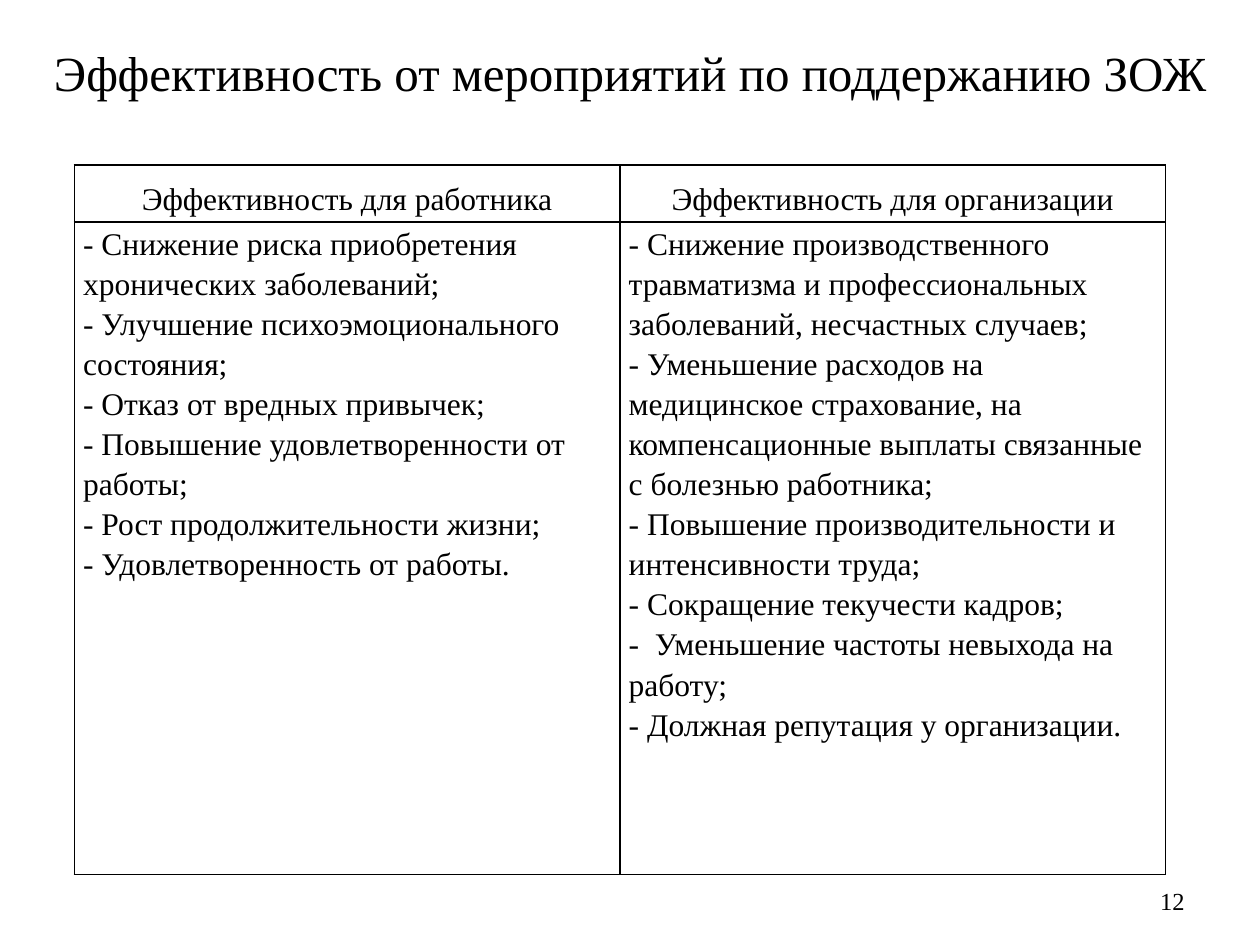
from dataclasses import dataclass

from lxml import etree
from pptx import Presentation
from pptx.dml.color import RGBColor
from pptx.enum.text import MSO_ANCHOR, MSO_AUTO_SIZE, PP_ALIGN
from pptx.oxml.ns import qn
from pptx.slide import Slide
from pptx.table import _Cell
from pptx.text.text import TextFrame
from pptx.util import Inches, Pt

LEFT, MID, RIGHT = PP_ALIGN.LEFT, PP_ALIGN.CENTER, PP_ALIGN.RIGHT
TOP, CENTER = MSO_ANCHOR.TOP, MSO_ANCHOR.MIDDLE
FIXED = MSO_AUTO_SIZE.NONE
FONT = "Times New Roman"
COLORS = {"ink": "000000", "paper": "FFFFFF"}


@dataclass
class Column:
    head: str
    items: list[str]


COLUMNS = [
    Column("Эффективность для работника", [
        "- Снижение риска приобретения хронических заболеваний;",
        "- Улучшение психоэмоционального состояния;",
        "- Отказ от вредных привычек;",
        "- Повышение удовлетворенности от работы;",
        "- Рост продолжительности жизни;",
        "- Удовлетворенность от работы.",
    ]),
    Column("Эффективность для организации", [
        "- Снижение производственного травматизма и профессиональных "
        "заболеваний, несчастных случаев;",
        "- Уменьшение расходов на медицинское страхование, на "
        "компенсационные выплаты связанные с болезнью работника;",
        "- Повышение производительности и интенсивности труда;",
        "- Сокращение текучести кадров;",
        "-  Уменьшение частоты невыхода на работу;",
        "- Должная репутация у организации.",
    ]),
]


def write(frame: TextFrame, text: str, size: int, align: PP_ALIGN,
          lines: float = 1.0, before: float = 0) -> None:
    frame.text = text
    frame.word_wrap = True
    for para in frame.paragraphs:
        para.alignment = align
        para.line_spacing = lines
        para.space_before = Pt(before)
        for run in para.runs:
            run.font.name = FONT
            run.font.size = Pt(size)
            run.font.color.rgb = RGBColor.from_string(COLORS["ink"])


def add_title(slide: Slide, text: str) -> None:
    title = slide.shapes.title
    title.left, title.top = Inches(0.12), Inches(0.29)
    title.width, title.height = Inches(9.76), Inches(7.09)
    frame = title.text_frame
    write(frame, text, 28, MID, before=3)
    frame.auto_size = FIXED
    frame.vertical_anchor = TOP


def add_number(slide: Slide, text: str) -> None:
    box = slide.shapes.add_textbox(
        Inches(7.17), Inches(6.95), Inches(2.33), Inches(0.4))
    write(box.text_frame, text, 14, RIGHT)
    box.text_frame.vertical_anchor = CENTER


def add_border(cell: _Cell) -> None:
    props = cell._tc.get_or_add_tcPr()
    for side in ("lnL", "lnR", "lnT", "lnB"):
        line = etree.SubElement(props, qn(f"a:{side}"), w=str(Pt(1)))
        fill = etree.SubElement(line, qn("a:solidFill"))
        etree.SubElement(fill, qn("a:srgbClr"), val=COLORS["ink"])


def fill_cell(cell: _Cell, text: str, align: PP_ALIGN, lines: float) -> None:
    write(cell.text_frame, text, 18, align, lines)
    cell.margin_left = cell.margin_right = Inches(0.07)
    cell.margin_top = cell.margin_bottom = 0
    add_border(cell)
    cell.fill.background()


def add_grid(slide: Slide, columns: list[Column]) -> None:
    table = slide.shapes.add_table(
        2, len(columns), Inches(0.59), Inches(1.31),
        Inches(8.66), Inches(5.6)).table
    table.first_row = table.horz_banding = False
    for row, height in zip(table.rows, (0.42, 5.18)):
        row.height = Inches(height)
    for index, column in enumerate(columns):
        fill_cell(table.cell(0, index), column.head, MID, 1.5)
        fill_cell(table.cell(1, index), "\n".join(column.items), LEFT, 1.15)


def main() -> None:
    deck = Presentation()
    deck.slide_width, deck.slide_height = Inches(10), Inches(7.5)
    slide = deck.slides.add_slide(deck.slide_layouts[5])
    back = slide.background.fill
    back.solid()
    back.fore_color.rgb = RGBColor.from_string(COLORS["paper"])
    add_title(slide, "Эффективность от мероприятий по поддержанию ЗОЖ")
    add_number(slide, "12")
    add_grid(slide, COLUMNS)
    deck.save("out.pptx")


if __name__ == "__main__":
    main()
